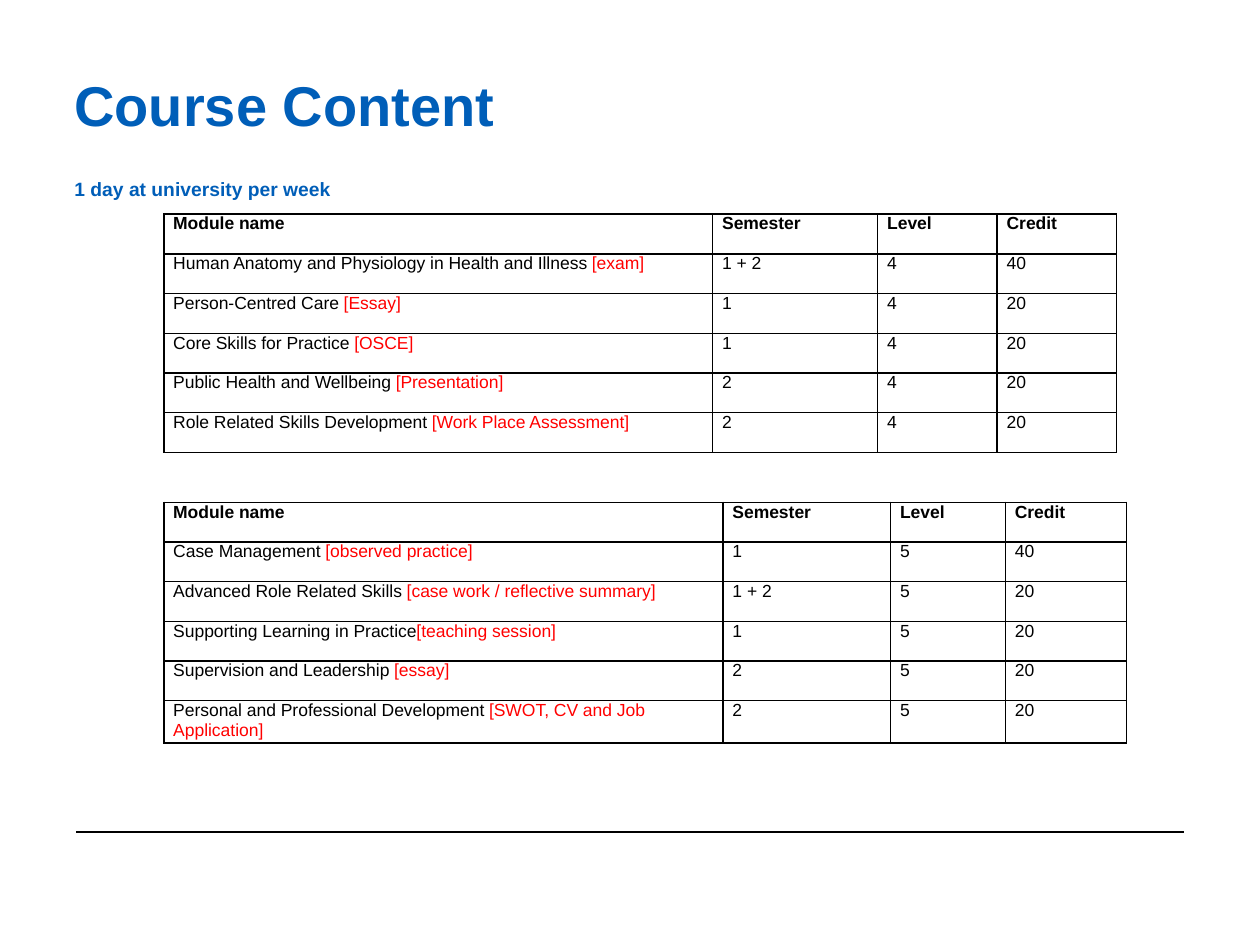
from dataclasses import dataclass

from lxml.etree import SubElement
from pptx import Presentation
from pptx.dml.color import RGBColor as RGB
from pptx.enum.shapes import MSO_CONNECTOR as Connector
from pptx.enum.text import MSO_ANCHOR as Anchor
from pptx.oxml import parse_xml
from pptx.oxml.ns import nsdecls, qn
from pptx.util import Pt


@dataclass(frozen=True)
class Theme:
    font: str = "Arial"
    heading: str = "005EB8"
    text: str = "000000"
    assessment: str = "FF0000"
    title_size: float = 32
    subtitle_size: float = 11
    table_size: float = 10
    border: float = 1
    rule: float = 1.25


THEME = Theme()
HEADER = ("Module name", "Semester", "Level", "Credit")
ROW_HEIGHT = 22.68
TABLE_LEFT = 93.6

LEVEL_4 = [
    ("Human Anatomy and Physiology in Health and Illness ", "[exam]", "1 + 2", "40"),
    ("Person-Centred Care ", "[Essay]", "1", "20"),
    ("Core Skills for Practice ", "[OSCE]", "1", "20"),
    ("Public Health and Wellbeing ", "[Presentation]", "2", "20"),
    ("Role Related Skills Development ", "[Work Place Assessment]", "2", "20"),
]
LEVEL_5 = [
    ("Case Management ", "[observed practice]", "1", "40"),
    ("Advanced Role Related Skills ", "[case work / reflective summary]", "1 + 2", "20"),
    ("Supporting Learning in Practice", "[teaching session]", "1", "20"),
    ("Supervision and Leadership ", "[essay]", "2", "20"),
    ("Personal and Professional Development ", "[SWOT, CV and Job Application]", "2", "20"),
]


def style_run(r, size, color, bold=False):
    r.font.name = THEME.font
    r.font.size = Pt(size)
    r.font.bold = bold
    r.font.color.rgb = RGB.from_string(color)


def add_title(s, title, subtitle):
    tf = s.shapes.add_textbox(Pt(42.5), Pt(42.5), Pt(635), Pt(70.5)).text_frame
    tf.word_wrap = True
    tf.vertical_anchor = Anchor.TOP
    tf.margin_left = tf.margin_right = tf.margin_top = tf.margin_bottom = 0
    p = tf.paragraphs[0]
    p.text = f"{title}\v{subtitle}"
    p.line_spacing = Pt(36)
    for r, size in zip(p.runs, (THEME.title_size, THEME.subtitle_size)):
        style_run(r, size, THEME.heading, bold=True)


def add_rule(s, left, right, y):
    line = s.shapes.add_connector(Connector.STRAIGHT, Pt(left), Pt(y), Pt(right), Pt(y))
    line.line.color.rgb = RGB.from_string(THEME.text)
    line.line.width = Pt(THEME.rule)
    SubElement(line._element.spPr, qn("a:effectLst"))


def add_borders(cell):
    tc_pr = cell._tc.get_or_add_tcPr()
    for i, side in enumerate("LRTB"):
        tc_pr.insert(i, parse_xml(
            f'<a:ln{side} {nsdecls("a")} w="{Pt(THEME.border)}"><a:solidFill>'
            f'<a:srgbClr val="{THEME.text}"/></a:solidFill></a:ln{side}>'))


def fill_cell(cell, parts, bold):
    cell.margin_left = cell.margin_right = Pt(5.4)
    cell.margin_top = cell.margin_bottom = 0
    cell.vertical_anchor = Anchor.TOP
    cell.fill.background()
    add_borders(cell)
    p = cell.text_frame.paragraphs[0]
    for text, color in zip(parts, (THEME.text, THEME.assessment)):
        r = p.add_run()
        r.text = text
        style_run(r, THEME.table_size, color, bold)


def add_modules(s, top, widths, level, modules, last_height=ROW_HEIGHT):
    rows = [[(h,) for h in HEADER]]
    rows += [[(name, assessment), (semester,), (level,), (credit,)]
             for name, assessment, semester, credit in modules]
    heights = [ROW_HEIGHT] * len(modules) + [last_height]
    table = s.shapes.add_table(len(rows), len(widths), Pt(TABLE_LEFT), Pt(top),
                               Pt(sum(widths)), Pt(sum(heights))).table
    table.horz_banding = False
    for column, width in zip(table.columns, widths):
        column.width = Pt(width)
    for i, (row, height) in enumerate(zip(rows, heights)):
        table.rows[i].height = Pt(height)
        for j, parts in enumerate(row):
            fill_cell(table.cell(i, j), parts, bold=i == 0)


def main():
    prs = Presentation()
    prs.slide_width, prs.slide_height = Pt(720), Pt(540)
    s = prs.slides.add_slide(prs.slide_layouts[6])
    add_rule(s, 43.7, 676.6, 475.6)
    add_title(s, "Course Content", "1 day at university per week")
    add_modules(s, 122.4, (313.7, 94.3, 68.3, 68.3), "4", LEVEL_4)
    add_modules(s, 287, (319.6, 95.8, 65.6, 69.1), "5", LEVEL_5, last_height=24.1)
    prs.save("out.pptx")


if __name__ == "__main__":
    main()
